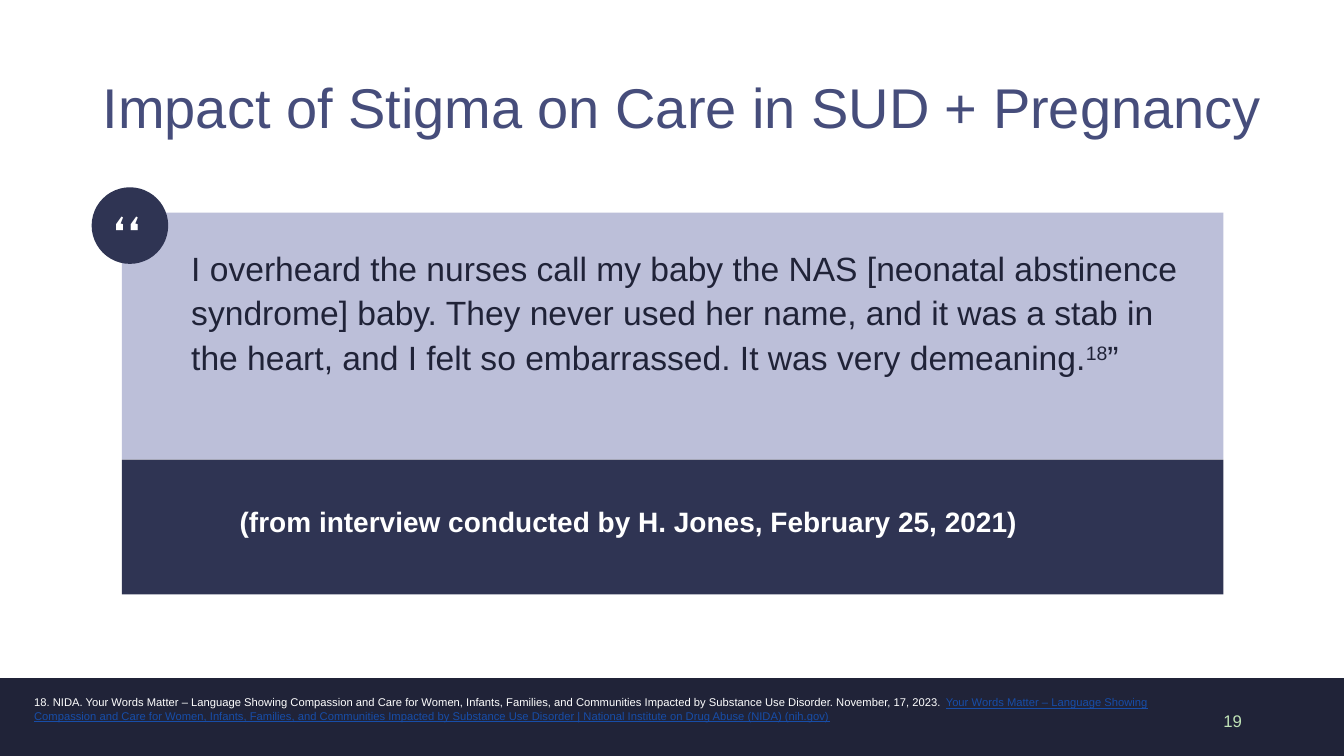
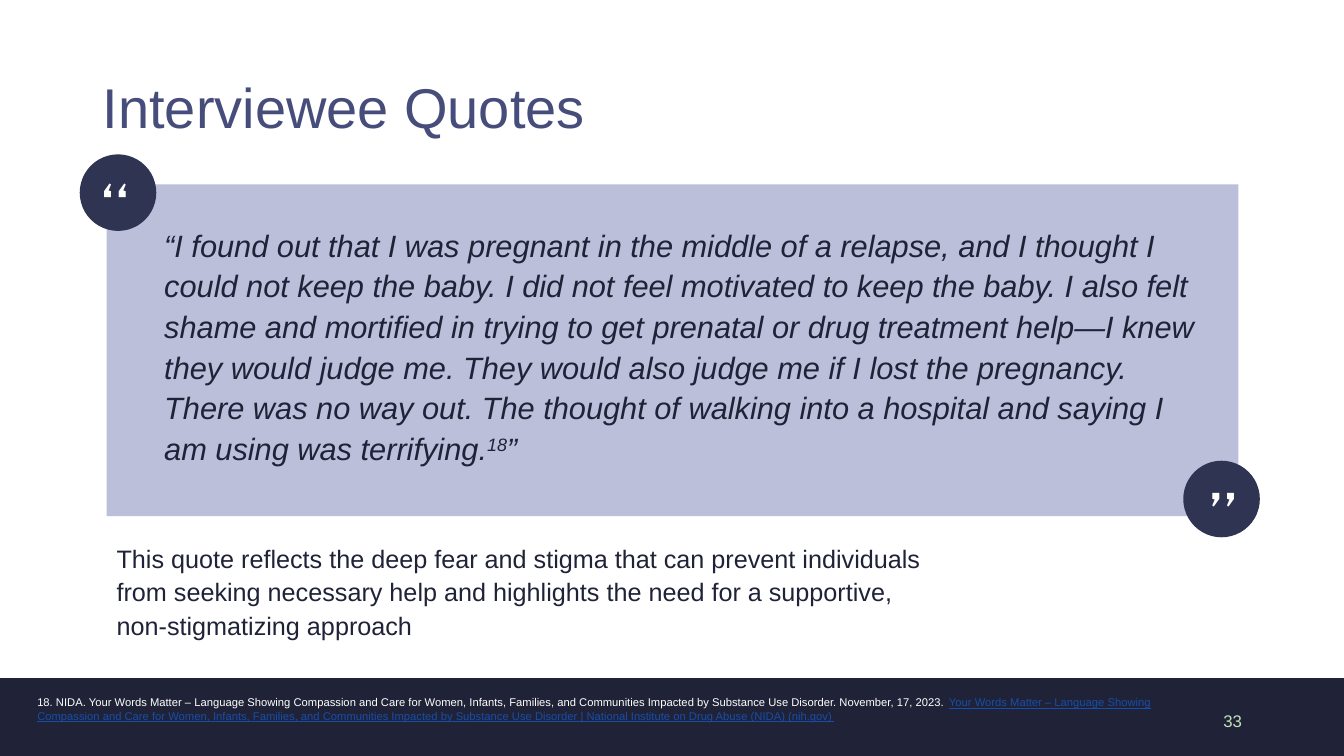
"""Build two quotation slides about stigma in care during pregnancy."""
from pptx import Presentation
from pptx.dml.color import RGBColor
from pptx.enum.shapes import MSO_SHAPE
from pptx.enum.text import MSO_ANCHOR, PP_ALIGN
from pptx.util import Cm, Pt

RECTANGLE, OVAL = MSO_SHAPE.RECTANGLE, MSO_SHAPE.OVAL
TOP, MIDDLE = MSO_ANCHOR.TOP, MSO_ANCHOR.MIDDLE
LEFT, RIGHT = PP_ALIGN.LEFT, PP_ALIGN.RIGHT

INK = RGBColor(0x20, 0x23, 0x38)
NAVY = RGBColor(0x2F, 0x34, 0x53)
LAVENDER = RGBColor(0xBC, 0xBF, 0xD9)
INDIGO = RGBColor(0x46, 0x4D, 0x7B)
GREEN = RGBColor(0xBF, 0xE2, 0xB6)
BLUE = RGBColor(0x17, 0x4D, 0xA8)
WHITE = RGBColor(0xFF, 0xFF, 0xFF)

WIDTH, HEIGHT = 33.87, 19.05
BAND_TOP = 17.09
BADGE = 1.93
MARK_WIDTH, MARK_HEIGHT = 1.63, 2.39
MARK_DX, MARK_DY = 0.31, 0.19

SOURCE_TITLE = (
    "Your Words Matter – Language Showing Compassion and Care for Women, "
    "Infants, Families, and Communities Impacted by Substance Use Disorder"
)
REFERENCE = f"18. NIDA. {SOURCE_TITLE}. November, 17, 2023. "
LINK = f"{SOURCE_TITLE} | National Institute on Drug Abuse (NIDA) (nih.gov)"

TITLE = {"size": Pt(40), "color": INDIGO}
NUMBER = {"size": Pt(12), "color": GREEN}
NOTE = {"size": Pt(8), "color": WHITE}
NOTE_LINK = {"size": Pt(8), "color": BLUE, "underline": True}
QUOTE = {"size": Pt(24), "color": INK}
ITALIC_QUOTE = {"size": Pt(22), "color": INK, "italic": True}
CREDIT = {"size": Pt(20), "color": WHITE, "bold": True}
CAPTION = {"size": Pt(18), "color": INK}
MARK = {"size": Pt(50), "color": WHITE, "name": "Cabin"}


class QuoteDeck:
    """Hold the deck style and draw on the current page."""

    def __init__(self):
        """Start an empty widescreen deck."""
        self.deck = Presentation()
        self.deck.slide_width, self.deck.slide_height = Cm(WIDTH), Cm(HEIGHT)
        self.page = None

    def new_page(self, title, number, note_left):
        """Add a page with its title, footer band, reference and number."""
        self.page = self.deck.slides.add_slide(self.deck.slide_layouts[6])
        self.shape(RECTANGLE, 0, BAND_TOP, WIDTH, HEIGHT - BAND_TOP, INK)
        self.text(2.34, 1.88, 31.5, 1.8, [(title, TITLE)],
                  spacing=0.9, anchor=MIDDLE)
        self.text(note_left, 17.4, 29.5, 1.27,
                  [(REFERENCE, NOTE), (LINK, NOTE_LINK)])
        self.text(23.93, 17.65, 7.62, 1.02, [(str(number), NUMBER)],
                  anchor=MIDDLE, align=RIGHT)

    def shape(self, kind, left, top, width, height, color):
        """Draw a flat filled shape without outline."""
        shape = self.page.shapes.add_shape(
            kind, Cm(left), Cm(top), Cm(width), Cm(height))
        shape.shadow.inherit = False
        shape.fill.solid()
        shape.fill.fore_color.rgb = color
        shape.line.fill.background()

    def text(self, left, top, width, height, spans,
             spacing=1.0, anchor=TOP, align=LEFT):
        """Write one paragraph of styled spans and return its box."""
        box = self.page.shapes.add_textbox(
            Cm(left), Cm(top), Cm(width), Cm(height))
        frame = box.text_frame
        frame.word_wrap = True
        frame.vertical_anchor = anchor
        para = frame.paragraphs[0]
        para.line_spacing, para.alignment = spacing, align
        for words, style in spans:
            self.span(para, words, style)
        return box

    def span(self, para, words, style):
        """Append one styled span to a paragraph."""
        span = para.add_run()
        span.text = words
        for key, value in {"name": "Arial", **style}.items():
            if key == "color":
                span.font.color.rgb = value
            elif key == "baseline":
                span._r.get_or_add_rPr().set("baseline", str(value))
            else:
                setattr(span.font, key, value)

    def quote(self, left, top, width, height, words, style):
        """Write a quotation that ends in a raised reference number."""
        raised = {**style, "baseline": 30000}
        self.text(left, top, width, height,
                  [(words, style), ("18", raised), ("”", style)], spacing=1.1)

    def badge(self, left, top, closing=False):
        """Draw a round quotation mark, turned over when it closes."""
        self.shape(OVAL, left, top, BADGE, BADGE, NAVY)
        dx, dy = MARK_DX, MARK_DY
        if closing:
            dx = BADGE - MARK_DX - MARK_WIDTH
            dy = BADGE - MARK_DY - MARK_HEIGHT
        box = self.text(left + dx, top + dy, MARK_WIDTH, MARK_HEIGHT,
                        [("“", MARK)])
        box.rotation = 180 if closing else 0


def main():
    """Build and save both slides."""
    deck = QuoteDeck()

    deck.new_page("Impact of Stigma on Care in SUD + Pregnancy", 19, 0.61)
    deck.shape(RECTANGLE, 3.07, 5.36, 27.76, 6.22, LAVENDER)
    deck.shape(RECTANGLE, 3.07, 11.58, 27.76, 3.4, NAVY)
    deck.quote(
        4.57, 6.02, 25.43, 5,
        "I overheard the nurses call my baby the NAS [neonatal abstinence "
        "syndrome] baby. They never used her name, and it was a stab in the "
        "heart, and I felt so embarrassed. It was very demeaning.", QUOTE)
    deck.badge(2.31, 4.72)
    deck.text(
        5.79, 11.58, 24, 3.02,
        [("(from interview conducted by H. Jones, February 25, 2021)", CREDIT)],
        spacing=1.1, anchor=MIDDLE)

    deck.new_page("Interviewee Quotes", 33, 0.69)
    deck.shape(RECTANGLE, 2.69, 4.65, 28.52, 8.36, LAVENDER)
    deck.badge(2.01, 3.89)
    deck.badge(29.82, 11.61, closing=True)
    deck.quote(
        3.89, 5.49, 26.52, 6.38,
        "“I found out that I was pregnant in the middle of a relapse, and I "
        "thought I could not keep the baby. I did not feel motivated to keep "
        "the baby. I also felt shame and mortified in trying to get prenatal "
        "or drug treatment help—I knew they would judge me. They would also "
        "judge me if I lost the pregnancy. There was no way out. The thought "
        "of walking into a hospital and saying I am using was terrifying.",
        ITALIC_QUOTE)
    deck.text(
        2.69, 13.49, 20.8, 2.72,
        [("This quote reflects the deep fear and stigma that can prevent "
          "individuals from seeking necessary help and highlights the need "
          "for a supportive, non-stigmatizing approach", CAPTION)],
        spacing=1.1)

    deck.deck.save("out.pptx")


if __name__ == "__main__":
    main()
